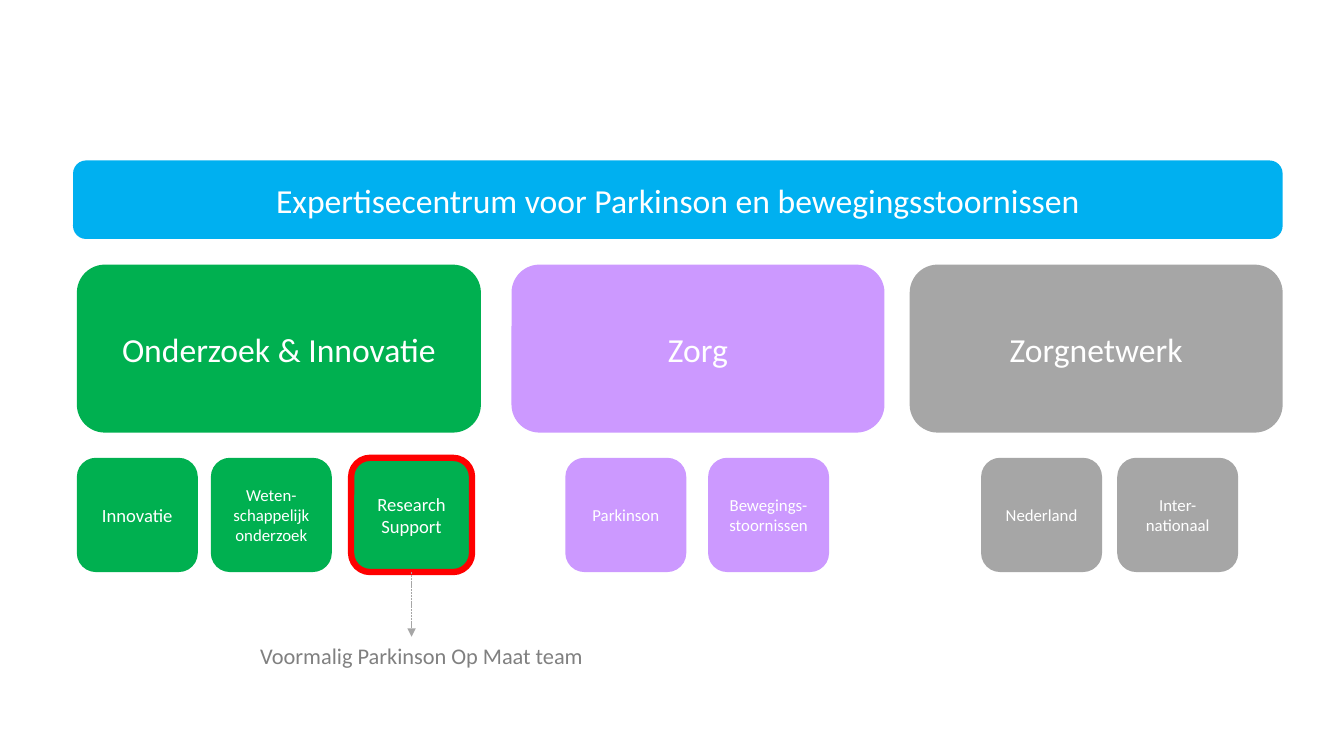
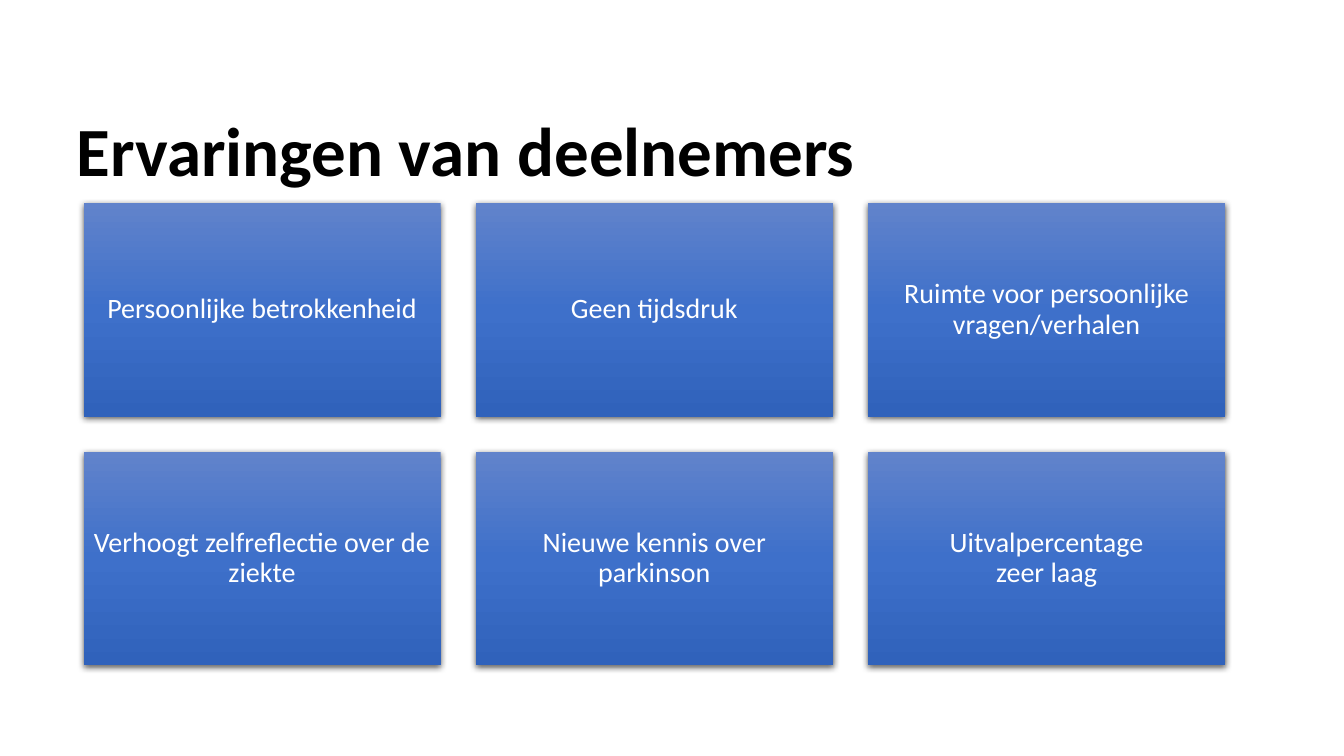
"""Build two slides: an organisation chart and a grid of experiences."""
from copy import deepcopy
from dataclasses import dataclass

from pptx import Presentation
from pptx.dml.color import RGBColor as RGB
from pptx.enum.dml import MSO_LINE as Dash
from pptx.enum.shapes import MSO_CONNECTOR as Link, MSO_SHAPE as Form
from pptx.enum.text import MSO_ANCHOR as Anchor, PP_ALIGN as Align
from pptx.oxml.ns import qn
from pptx.util import Inches, Pt
from lxml.etree import SubElement as Sub


@dataclass(frozen=True)
class Theme:
    font: str = "Calibri"
    white: str = "FFFFFF"
    black: str = "000000"
    blue: str = "00B0F0"
    green: str = "00B050"
    lilac: str = "CC99FF"
    grey: str = "A6A6A6"
    slate: str = "808080"
    red: str = "FF0000"
    fade: tuple = ("6183CB", "3E70CA", "3062BB")
    title: float = 49.3
    head: int = 24
    card: int = 20
    note: int = 16
    unit: float = 13.3
    small: int = 12


class Deck:
    cols, rows = 160, 90

    def __init__(self, theme):
        self.theme = theme
        self.prs = Presentation()
        self.prs.slide_width = Inches(13.33)
        self.prs.slide_height = Inches(7.5)
        self.slide = None

    def page(self):
        self.slide = self.prs.slides.add_slide(self.prs.slide_layouts[6])

    def x(self, col):
        return round(self.prs.slide_width * col / self.cols)

    def y(self, row):
        return round(self.prs.slide_height * row / self.rows)

    def area(self, col, row, wide, high):
        return self.x(col), self.y(row), self.x(wide), self.y(high)

    def label(self, shape, lines, size, color, align=Align.CENTER,
              anchor=Anchor.MIDDLE, pad=None, space=None, bold=False):
        frame = shape.text_frame
        frame.word_wrap = True
        frame.vertical_anchor = anchor
        if pad is not None:
            frame.margin_left = frame.margin_right = self.x(pad)
            frame.margin_top = frame.margin_bottom = self.y(pad)
        for i, line in enumerate(lines):
            para = frame.add_paragraph() if i else frame.paragraphs[0]
            para.alignment = align
            para.line_spacing = space
            run = para.add_run()
            run.text = line
            run.font.name = self.theme.font
            run.font.size = Pt(size)
            run.font.bold = bold
            run.font.color.rgb = RGB.from_string(color)

    def shape(self, form, area):
        shape = self.slide.shapes.add_shape(form, *self.area(*area))
        shape.shadow.inherit = False
        shape.line.fill.background()
        return shape

    def box(self, area, lines, size, fill, edge=None):
        box = self.shape(Form.ROUNDED_RECTANGLE, area)
        box.fill.solid()
        box.fill.fore_color.rgb = RGB.from_string(fill)
        if edge:
            box.line.color.rgb = RGB.from_string(edge)
            box.line.width = Pt(4.5)
        self.label(box, lines, size, self.theme.white)
        return box

    def card(self, area, lines):
        card = self.shape(Form.RECTANGLE, area)
        card.fill.gradient()
        card.fill.gradient_angle = 270
        stops = card._element.spPr.find(".//" + qn("a:gsLst"))
        stops.insert(1, deepcopy(stops[0]))
        for i, (stop, color) in enumerate(
                zip(card.fill.gradient_stops, self.theme.fade)):
            stop.position = i / 2
            stop.color.rgb = RGB.from_string(color)
        glow = Sub(card._element.spPr.find(qn("a:effectLst")),
                   qn("a:outerShdw"), blurRad=str(Pt(4.5)),
                   dist=str(Pt(1.5)), dir="5400000", algn="ctr",
                   rotWithShape="0")
        tint = Sub(glow, qn("a:srgbClr"), val=self.theme.black)
        Sub(tint, qn("a:alpha"), val="63000")
        self.label(card, lines, self.theme.card, self.theme.white,
                   pad=0.95, space=0.9)

    def text(self, area, line, size, color, **style):
        text = self.slide.shapes.add_textbox(*self.area(*area))
        self.label(text, [line], size, color, align=Align.LEFT, **style)

    def arrow(self, start, col, row):
        end = self.x(col), self.y(row)
        arrow = self.slide.shapes.add_connector(Link.STRAIGHT, *end, *end)
        arrow.begin_connect(start, 2)
        arrow.line.color.rgb = RGB.from_string(self.theme.grey)
        arrow.line.width = Pt(0.5)
        arrow.line.dash_style = Dash.SQUARE_DOT
        props = arrow._element.spPr
        Sub(props.find(qn("a:ln")), qn("a:tailEnd"), type="triangle")
        Sub(props, qn("a:effectLst"))


def chart(deck):
    t = deck.theme
    deck.page()
    deck.box((8.7, 19.1, 144, 9.35),
             ["Expertisecentrum voor Parkinson en bewegingsstoornissen"],
             t.head, t.blue)
    for col, wide, name, fill in (
            (9.15, 48.1, "Onderzoek & Innovatie", t.green),
            (60.9, 44.4, "Zorg", t.lilac),
            (108.3, 44.4, "Zorgnetwerk", t.grey)):
        deck.box((col, 31.5, wide, 20), [name], t.head, fill)
    wide, high, row, foot = 14.4, 13.6, 54.5, 75.8
    for col, lines, size, fill in (
            (9.15, ["Innovatie"], t.unit, t.green),
            (25.1, ["Weten-schappelijk", "onderzoek"], t.small, t.green),
            (67.3, ["Parkinson"], t.small, t.lilac),
            (84.3, ["Bewegings-", "stoornissen"], t.small, t.lilac),
            (116.8, ["Nederland"], t.small, t.grey),
            (133, ["Inter-nationaal"], t.small, t.grey)):
        deck.box((col, row, wide, high), lines, size, fill)
    col = 41.8
    team = deck.box((col, row, wide, high), ["Research", "Support"],
                    t.unit, t.green, t.red)
    deck.text((29.8, foot, 47, 4.4), "Voormalig Parkinson Op Maat team",
              t.note, t.slate, anchor=Anchor.TOP)
    deck.arrow(team, col + wide / 2, foot)


def views(deck):
    t = deck.theme
    deck.page()
    deck.text((9.15, 13.7, 141.7, 9.4), "Ervaringen van deelnemers",
              t.title, t.black, pad=0, space=0.9, bold=True)
    wide, high, gap = 42.5, 25.4, 4.2
    for i, lines in enumerate((
            ["Persoonlijke betrokkenheid"],
            ["Geen tijdsdruk"],
            ["Ruimte voor persoonlijke vragen/verhalen"],
            ["Verhoogt zelfreflectie over de ziekte"],
            ["Nieuwe kennis over parkinson"],
            ["Uitvalpercentage", "zeer laag"])):
        row, col = divmod(i, 3)
        deck.card((9.95 + col * (wide + gap), 24.2 + row * (high + gap),
                   wide, high), lines)


def main():
    deck = Deck(Theme())
    chart(deck)
    views(deck)
    deck.prs.save("out.pptx")


if __name__ == "__main__":
    main()
